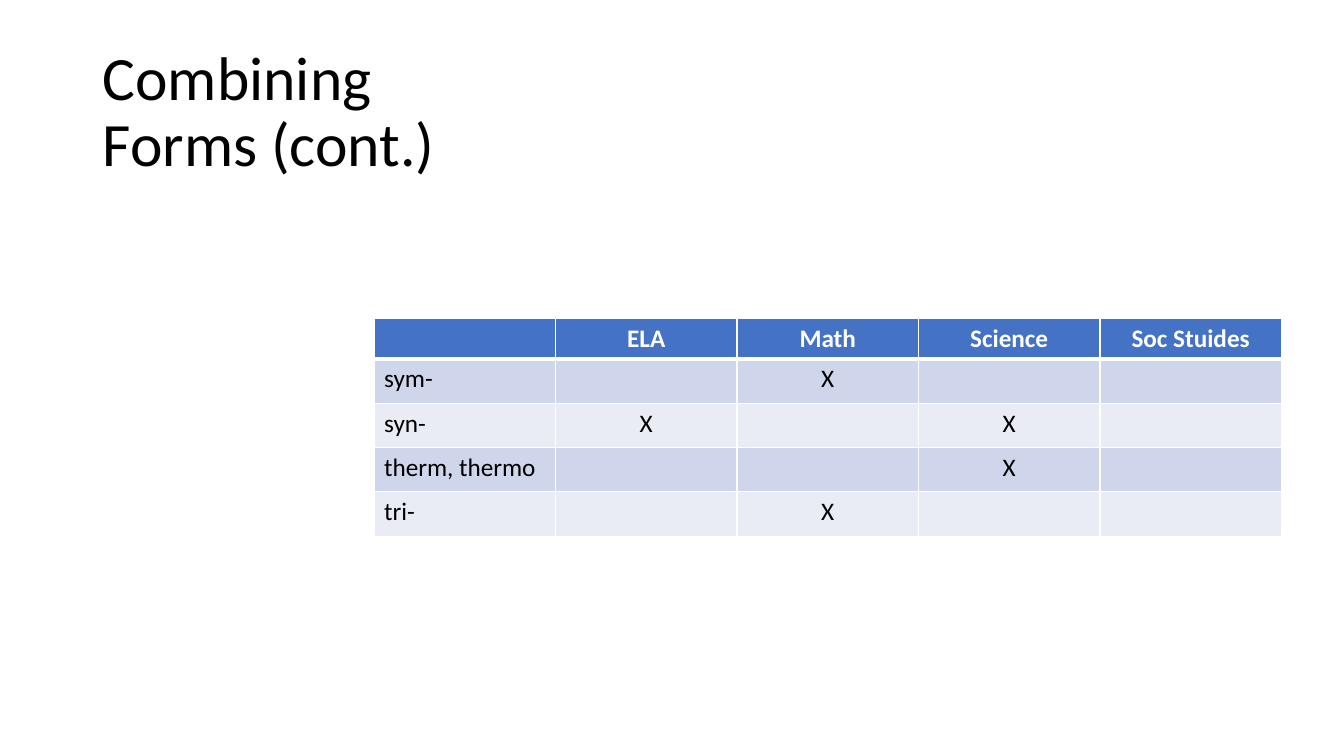
"""Builds the combining forms slide with its subject table."""
import dataclasses

import lxml.etree
import pptx
import pptx.dml.color
import pptx.enum.text
import pptx.oxml.ns
import pptx.util

Inches = pptx.util.Inches
ALIGN = pptx.enum.text.PP_ALIGN


@dataclasses.dataclass(frozen=True)
class Theme:
    font: str = "Calibri"
    ink: str = "000000"
    white: str = "FFFFFF"
    head: str = "4472C4"
    bands: tuple = ("CFD5EA", "E9EBF5")
    title: int = 44
    body: int = 18
    thin: int = 1
    thick: int = 3


THEME = Theme()
HEADS = ("ELA", "Math", "Science", "Soc Stuides")
FORMS = {
    "sym-": {"Math"},
    "syn-": {"ELA", "Science"},
    "therm, thermo": {"Science"},
    "tri-": {"Math"},
}


def paint(color):
    return pptx.dml.color.RGBColor.from_string(color)


def style(para, size, color, bold=False):
    for run in para.runs:
        run.font.color.rgb = paint(color)
        looks = {"name": THEME.font, "size": pptx.util.Pt(size), "bold": bold}
        for key, value in looks.items():
            setattr(run.font, key, value)


def add_title(slide, text):
    box = slide.shapes.add_textbox(Inches(0.92), Inches(0.4), Inches(11.5), Inches(1.45))
    frame = box.text_frame
    looks = {"word_wrap": True, "vertical_anchor": pptx.enum.text.MSO_ANCHOR.MIDDLE}
    for key, value in looks.items():
        setattr(frame, key, value)
    frame.text = text
    para = frame.paragraphs[0]
    para.line_spacing = 0.9
    style(para, THEME.title, THEME.ink)


def add_edges(cell, widths):
    props = cell._tc.get_or_add_tcPr()
    name = pptx.oxml.ns.qn
    for spot, (side, width) in enumerate(widths.items()):
        line = lxml.etree.Element(name(f"a:ln{side}"), w=str(pptx.util.Pt(width)))
        fill = lxml.etree.SubElement(line, name("a:solidFill"))
        lxml.etree.SubElement(fill, name("a:srgbClr"), val=THEME.white)
        props.insert(spot, line)


def fill_cell(cell, text, row, col):
    head = row == 0
    cell.fill.solid()
    cell.fill.fore_color.rgb = paint(THEME.head if head else THEME.bands[(row - 1) % 2])
    cell.text = text
    para = cell.text_frame.paragraphs[0]
    para.alignment = ALIGN.CENTER if col else ALIGN.LEFT
    style(para, THEME.body, THEME.white if head else THEME.ink, head)
    widths = dict.fromkeys("LRTB", THEME.thin)
    if row < 2:
        widths["B" if head else "T"] = THEME.thick
    add_edges(cell, widths)


def add_grid(slide, rows):
    count = len(rows[0])
    frame = slide.shapes.add_table(
        len(rows), count, Inches(3.71), Inches(3.16), Inches(1.8 * count), Inches(2.16)
    )
    table = frame.table
    for col in table.columns:
        col.width = Inches(1.8)
    for row, texts in enumerate(rows):
        table.rows[row].height = Inches(0.44 if row else 0.4)
        for col, text in enumerate(texts):
            fill_cell(table.cell(row, col), text, row, col)


def main():
    deck = pptx.Presentation()
    size = {"slide_width": Inches(13.33), "slide_height": Inches(7.5)}
    for key, value in size.items():
        setattr(deck, key, value)
    slide = deck.slides.add_slide(deck.slide_layouts[6])
    add_title(slide, "Combining \vForms (cont.)")
    marks = [[form, *("X" if head in used else "" for head in HEADS)]
             for form, used in FORMS.items()]
    add_grid(slide, [["", *HEADS], *marks])
    deck.save("out.pptx")


if __name__ == "__main__":
    main()
